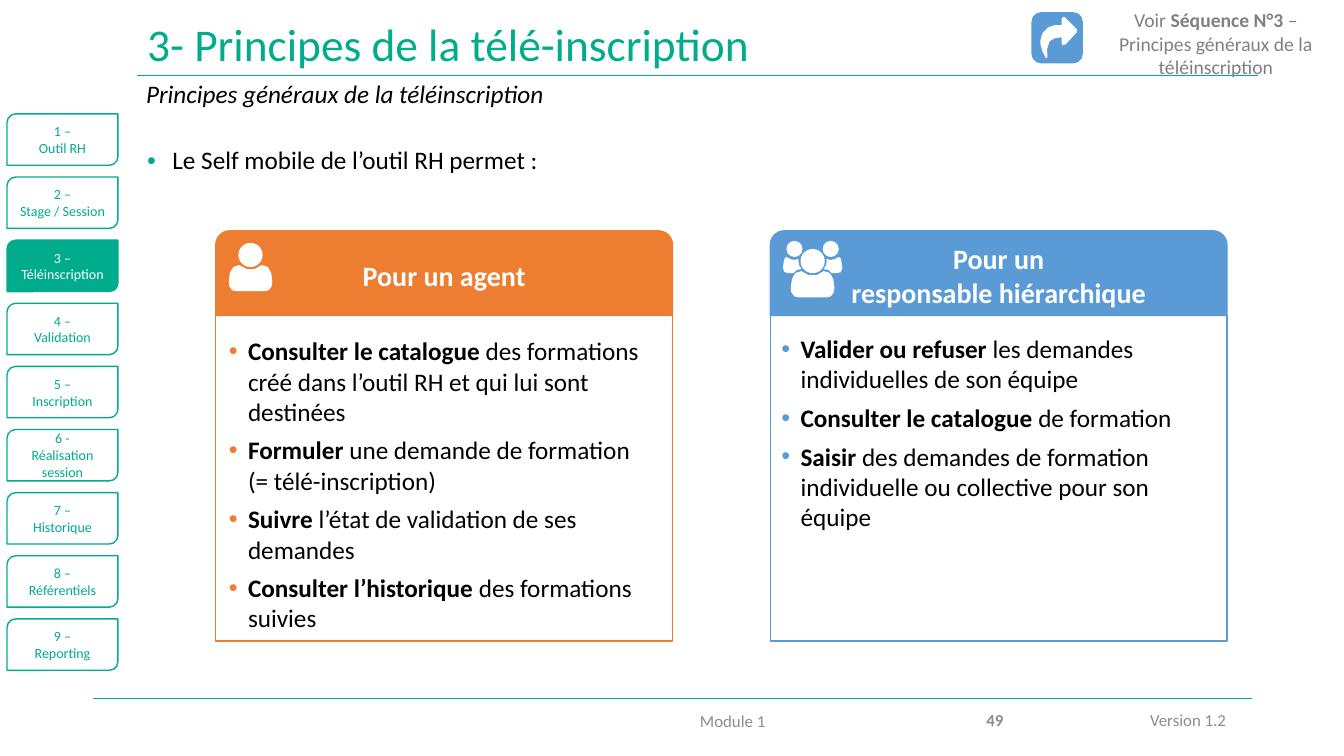
import pptx
import pptx.util
import pptx.dml.color
import pptx.enum.shapes
import pptx.enum.text
import pptx.oxml
import pptx.oxml.ns
from lxml import etree

Inch = pptx.util.Inches
Pt = pptx.util.Pt
RGB = pptx.dml.color.RGBColor
Kind = pptx.enum.shapes.MSO_SHAPE
Align = pptx.enum.text.PP_ALIGN
Mid = pptx.enum.text.MSO_ANCHOR.MIDDLE
Top = pptx.enum.text.MSO_ANCHOR.TOP

GREEN = RGB(0x00, 0xAC, 0x8C)
BLUE = RGB(0x5B, 0x9B, 0xD5)
ORANGE = RGB(0xED, 0x7D, 0x31)
GREY = RGB(0x80, 0x80, 0x80)
PALE = RGB(0x8C, 0x8C, 0x8C)
BLACK = RGB(0, 0, 0)
WHITE = RGB(255, 255, 255)

WIDE, HIGH = 13.33, 7.5
TITLE = "3- Principes de la télé-inscription"
LEAD = "Le Self mobile de l’outil RH permet :"
SUB = "Principes généraux de la téléinscription"
SEE = [("Voir ", False), ("Séquence N°3 ", True),
       ("–\nPrincipes généraux de la téléinscription", False)]
TABS = ["1 –\nOutil RH", "2 –\nStage / Session", "3 –\nTéléinscription",
        "4 –\nValidation", "5 –\nInscription", "6 -\nRéalisation session",
        "7 –\nHistorique", "8 –\nRéférentiels", "9 –\nReporting"]
ACTIVE = 2
CARDS = [
    ("Pour un agent", ORANGE, 2.14, (2.27, 3.28, 4.27, 3.08), [
        [("Consulter le catalogue ", True),
         ("des formations créé dans l’outil RH et qui lui sont destinées", False)],
        [("Formuler", True),
         (" une demande de formation\n(= télé-inscription)", False)],
        [("Suivre", True), (" l’état de validation de ses demandes", False)],
        [("Consulter l’historique ", True), ("des formations suivies", False)]]),
    ("Pour un\nresponsable hiérarchique", BLUE, 7.64, (7.75, 3.26, 4.45, 2.09), [
        [("Valider ou refuser ", True),
         ("les demandes individuelles de son équipe", False)],
        [("Consulter le catalogue ", True), ("de formation", False)],
        [("Saisir", True),
         (" des demandes de formation individuelle ou collective pour son équipe",
          False)]]),
]
FOOT = [("Version 1.2", (11.31, 6.94, 1.13, 0.41), Align.LEFT, False),
        ("Module 1", (4.42, 6.95, 3.27, 0.41), Align.RIGHT, False),
        ("49", (9, 6.94, 1.05, 0.4), Align.RIGHT, True)]
RULES = [(1.36, 12.48, 0.75), (0.92, 12.42, 6.93)]

BUST = [(0, .26), (.04, .26), (.075, .24), (.11, .22), (.145, .23), (.17, .24),
        (.19, .27), (.205, .3), (.215, .37), (.215, .4), (.21, .43),
        (.19, .46), (.17, .475), (.135, .48), (0, .48)]
PEER = [(.26, .08), (.22, .1), (.18, .11), (.14, .1), (.14, .12), (.135, .16),
        (.11, .2), (.16, .21), (.19, .24), (.24, .24), (.28, .23),
        (.295, .19), (.285, .12), (.275, .09)]
ARROW = [(.33, .05), (.31, .05), (.3, .07), (.3, .13), (.23, .13), (.17, .15),
         (.14, .18), (.11, .21), (.1, .24), (.09, .28), (.09, .32), (.11, .39),
         (.14, .45), (.15, .46), (.16, .44), (.155, .37), (.18, .29),
         (.23, .26), (.3, .25), (.3, .31), (.31, .33), (.34, .32),
         (.45, .2), (.45, .17), (.34, .06)]

deck = pptx.Presentation()
deck.slide_width, deck.slide_height = Inch(WIDE), Inch(HIGH)
slide = deck.slides.add_slide(deck.slide_layouts[1])
shapes = slide.shapes


def place(item, box):
    item.left, item.top, item.width, item.height = map(Inch, box)


def paint(item, fill, line=None):
    item.shadow.inherit = False
    if fill is None:
        item.fill.background()
    else:
        item.fill.solid()
        item.fill.fore_color.rgb = fill
    if line is None:
        item.line.fill.background()
    else:
        item.line.color.rgb = line
        item.line.width = Pt(1)


def add_mark(para, color, hang):
    props = para._p.get_or_add_pPr()
    props.set("marL", str(Inch(hang)))
    props.set("indent", str(-Inch(hang)))
    tag = pptx.oxml.ns.qn
    tint = etree.SubElement(props, tag("a:buClr"))
    etree.SubElement(tint, tag("a:srgbClr")).set("val", str(color))
    etree.SubElement(props, tag("a:buFont")).set("typeface", "Arial")
    etree.SubElement(props, tag("a:buChar")).set("char", "•")


def write(item, paras, size, color, align=Align.LEFT, anchor=Mid,
          mark=None, hang=0.19, gap=0, space=None, slant=None):
    frame = item.text_frame
    frame.word_wrap = True
    frame.auto_size = pptx.enum.text.MSO_AUTO_SIZE.NONE
    frame.vertical_anchor = anchor
    for i, runs in enumerate(paras):
        para = frame.add_paragraph() if i else frame.paragraphs[0]
        if mark is not None:
            add_mark(para, mark, hang)
        para.alignment = align
        para.space_before = Pt(gap if i else 0)
        para.line_spacing = space
        for text, bold in runs:
            for j, part in enumerate(text.split("\n")):
                if j:
                    para.add_line_break()
                run = para.add_run()
                run.text = part
                font = run.font
                font.name, font.size = "Calibri", Pt(size)
                font.bold, font.italic = bold, slant
                font.color.rgb = color


def add_box(box, paras, *args, **opts):
    item = shapes.add_textbox(*map(Inch, box))
    write(item, paras, *args, **opts)
    return item


def add_form(kind, box, fill, line=None):
    item = shapes.add_shape(kind, *map(Inch, box))
    paint(item, fill, line)
    return item


def trace(dots, left, top):
    dots = [(Inch(left + x), Inch(top + y)) for x, y in dots]
    pen = shapes.build_freeform(*dots[0])
    pen.add_line_segments(dots[1:], close=True)
    paint(pen.convert_to_shape(), WHITE)


def add_head(mid, top, size):
    add_form(Kind.OVAL, (mid - size / 2, top, size, size), WHITE)


def add_bust(mid, top):
    trace(BUST + [(-x, y) for x, y in BUST[-2:0:-1]], mid, top)
    add_head(mid, top, 0.24)


for start, end, y in RULES:
    rule = shapes.add_connector(pptx.enum.shapes.MSO_CONNECTOR.STRAIGHT,
                                Inch(start), Inch(y), Inch(end), Inch(y))
    rule.line.color.rgb = GREEN
    rule.line.width = Pt(0.5)
    etree.SubElement(rule._element.spPr, pptx.oxml.ns.qn("a:effectLst"))

title, body = shapes.title, slide.placeholders[1]
place(title, (1.36, 0.18, 11.12, 0.57))
write(title, [[(TITLE, False)]], 32.4, GREEN, space=0.9)
place(body, (1.36, 1.42, 11.05, 0.57))
write(body, [[(LEAD, False)]], 18, BLACK, anchor=Top, mark=GREEN,
      hang=0.25, space=0.9)

add_box((1.35, 0.73, 6.42, 0.4), [[(SUB, False)]], 18, BLACK,
        anchor=Top, slant=True)
add_form(Kind.ROUNDED_RECTANGLE, (10.23, 0.12, 0.51, 0.51), BLUE).adjustments[0] = 0.19
trace(ARROW, 10.23, 0.12)
add_box((10.78, 0.03, 2.56, 0.81), [SEE], 14, GREY, Align.CENTER, Top)

for name, color, left, box, items in CARDS:
    head = add_form(Kind.ROUND_2_SAME_RECTANGLE, (left, 2.29, 4.53, 0.84), color, color)
    write(head, [[(name, True)]], 20, WHITE, Align.CENTER)
    add_form(Kind.RECTANGLE, (left, 3.13, 4.53, 3.23), None, color)
    note = add_box(box, items, 18, BLACK, anchor=Top, mark=color, gap=6)
    note.text_frame.margin_left = 0

add_bust(2.485, 2.41)
add_bust(8.06, 2.47)
for side in (-1, 1):
    trace([(side * x, y) for x, y in PEER], 8.06, 2.47)
    add_head(8.06 + side * 0.18, 2.39, 0.16)

STEP = (6.14 - 1.13) / (len(TABS) - 1)
for i, label in enumerate(TABS):
    on = i == ACTIVE
    tab = add_form(Kind.ROUND_2_DIAG_RECTANGLE, (0.07, 1.13 + i * STEP, 1.1, 0.51),
                   GREEN if on else None, GREEN)
    tab.adjustments[0], tab.adjustments[1] = 0.167, 0
    write(tab, [[(label, False)]], 10, WHITE if on else GREEN, Align.CENTER)

for text, box, align, bold in FOOT:
    add_box(box, [[(text, bold)]], 12, PALE, align)

deck.save("out.pptx")
